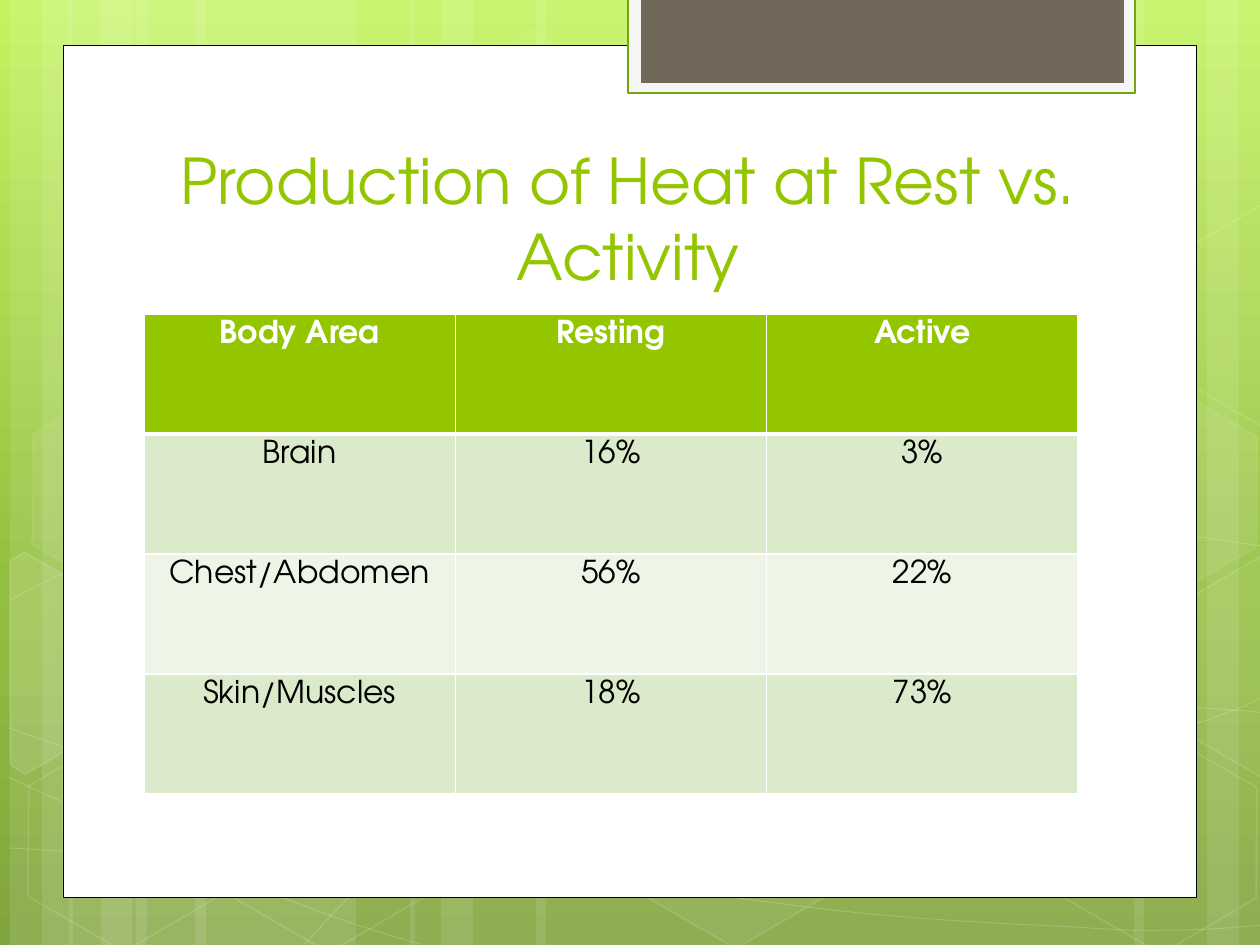
import math
from dataclasses import dataclass
from typing import Optional

from lxml import etree
from pptx import Presentation
from pptx.dml.color import RGBColor
from pptx.enum import shapes, text
from pptx.oxml import parse_xml
from pptx.oxml.ns import nsdecls, qn
from pptx.util import Pt

SCALE = 914400 / 126  # EMU per px
FONT = "TeX Gyre Adventor"
WHITE, GREEN = "FFFFFF", "94C600"
FULL = 100
TILT = 30  # degrees, for every hexagon


def px(length: float) -> int:
    return round(length * SCALE)


def color(hex_value: str) -> RGBColor:
    return RGBColor.from_string(hex_value)


@dataclass
class Style:
    fill: Optional[str] = None
    fill_alpha: int = FULL
    line: Optional[str] = None
    line_width: float = 1
    line_alpha: int = FULL


@dataclass
class Box:
    left: int
    top: int
    width: int
    height: int
    style: Style


@dataclass
class Hexagon:
    left: int
    top: int
    fill_alpha: int
    line_alpha: int


@dataclass
class CutHexagon:
    points: list
    center: tuple
    fill_alpha: int


def glass(fill_alpha: int, line_alpha: int) -> Style:
    fill = WHITE if fill_alpha else None
    return Style(fill, fill_alpha, WHITE, 1, line_alpha)


def set_alpha(paint, percent: int) -> None:
    if percent < FULL:
        node = next(paint.iter(qn("a:srgbClr")))
        etree.SubElement(node, qn("a:alpha")).set("val", str(percent * 1000))


def apply_style(shape, style: Style) -> None:
    shape.shadow.inherit = False
    if style.fill:
        shape.fill.solid()
        shape.fill.fore_color.rgb = color(style.fill)
        set_alpha(shape._element.spPr.find(qn("a:solidFill")), style.fill_alpha)
    else:
        shape.fill.background()
    if style.line:
        shape.line.color.rgb = color(style.line)
        shape.line.width = Pt(style.line_width)
        set_alpha(shape._element.spPr.find(qn("a:ln")), style.line_alpha)
    else:
        shape.line.fill.background()


def draw_box(slide, box: Box, kind=shapes.MSO_SHAPE.RECTANGLE):
    shape = slide.shapes.add_shape(
        kind, px(box.left), px(box.top), px(box.width), px(box.height))
    apply_style(shape, box.style)
    return shape


def draw_hexagon(slide, hexagon: Hexagon) -> None:
    style = glass(hexagon.fill_alpha, hexagon.line_alpha)
    box = Box(hexagon.left, hexagon.top, 220, 192, style)
    shape = draw_box(slide, box, shapes.MSO_SHAPE.HEXAGON)
    shape.adjustments[0] = 0.285
    shape.rotation = TILT


def draw_outline(slide, points: list, style: Style, closed: bool):
    builder = slide.shapes.build_freeform(*points[0], scale=SCALE)
    builder.add_line_segments(points[1:], close=closed)
    shape = builder.convert_to_shape()
    apply_style(shape, style)
    return shape


def draw_cut_hexagon(slide, cut: CutHexagon) -> None:
    """Turn the corners back about the center, then tilt the whole shape."""
    cos, sin = math.cos(math.radians(TILT)), math.sin(math.radians(TILT))
    center_x, center_y = cut.center
    offsets = [(x - center_x, y - center_y) for x, y in cut.points]
    upright = [(center_x + x * cos + y * sin, center_y - x * sin + y * cos)
               for x, y in offsets]
    draw_outline(slide, upright, glass(cut.fill_alpha, 12), True).rotation = TILT


def draw_curve(slide, knots: list, style: Style) -> None:
    """Knots are a start, then two handles and an end for each cubic curve."""
    shape = draw_outline(slide, knots, style, False)
    segments = list(shape._element.iter(qn("a:lnTo")))
    for first in range(0, len(segments), 3):
        curve = etree.Element(qn("a:cubicBezTo"))
        segments[first].addprevious(curve)
        for segment in segments[first:first + 3]:
            curve.append(segment[0])
            segment.getparent().remove(segment)


def set_background(slide, stops: list) -> None:
    slide.background.fill.solid()
    properties = slide._element.find(".//" + qn("p:bgPr"))
    marks = "".join(f'<a:gs pos="{position * 1000}"><a:srgbClr val="{value}"/></a:gs>'
                    for position, value in stops)
    gradient = parse_xml(f'<a:gradFill {nsdecls("a")}><a:gsLst>{marks}</a:gsLst>'
                         '<a:lin ang="5400000" scaled="0"/></a:gradFill>')
    properties.replace(properties.find(qn("a:solidFill")), gradient)


def write(frame, words: str, size: int, hex_value: str, bold: bool = False) -> None:
    paragraph = frame.paragraphs[0]
    paragraph.alignment = text.PP_ALIGN.CENTER
    run = paragraph.add_run()
    run.text = words
    run.font.name, run.font.size, run.font.bold = FONT, Pt(size), bold
    run.font.color.rgb = color(hex_value)


def set_borders(cell, widths: dict) -> None:
    properties = cell._tc.get_or_add_tcPr()
    for index, (side, width) in enumerate(widths.items()):
        properties.insert(index, parse_xml(
            f'<a:ln{side} {nsdecls("a")} w="{Pt(width)}"><a:solidFill>'
            f'<a:srgbClr val="{WHITE}"/></a:solidFill></a:ln{side}>'))


def draw_table(slide, rows: list) -> None:
    table = slide.shapes.add_table(
        len(rows), len(rows[0]), px(144), px(314), px(934), px(480)).table
    table.first_row = table.horz_banding = False
    for row, values in enumerate(rows):
        header = row == 0
        for column, value in enumerate(values):
            cell = table.cell(row, column)
            cell.fill.solid()
            cell.fill.fore_color.rgb = color(
                GREEN if header else ("EEF5E7", "DCEACC")[row % 2])
            set_borders(cell, {"L": 1, "R": 1, "T": 3 if row == 1 else 1,
                               "B": 3 if header else 1})
            write(cell.text_frame, value, 18, WHITE if header else "000000", header)


# Left and width of the full-height stripes
STRIPES = [(136, 220), (10, 63), (42, 105), (195, 220), (69, 63), (101, 105),
           (924, 220), (1207, 63), (1134, 105), (536, 388), (410, 63), (441, 105)]
CURVES = [
    [(9, 848), (77, 852), (145, 856), (239, 854), (334, 853), (451, 850), (577, 838),
     (703, 825), (882, 801), (998, 777), (1113, 753), (1231, 716), (1269, 694)],
    [(9, 601), (45, 581), (82, 562), (152, 543), (224, 524), (326, 498), (437, 488),
     (549, 479), (685, 478), (824, 488), (963, 498), (1193, 537), (1269, 547)],
    [(8, 777), (160, 847), (311, 916), (421, 944)],
    [(9, 728), (48, 742), (88, 756), (161, 776), (234, 795), (344, 827), (450, 848),
     (554, 869), (687, 892), (791, 905), (896, 919), (1008, 924), (1075, 927),
     (1140, 932), (1158, 930), (1191, 930), (1223, 929), (1246, 926), (1269, 925)],
    [(305, 944), (328, 919), (350, 893), (381, 871), (411, 848), (454, 823), (489, 805),
     (524, 788), (546, 780), (592, 767), (638, 754), (722, 737), (766, 728),
     (811, 719), (818, 719), (857, 717), (896, 713), (958, 709), (1000, 708),
     (1045, 707), (1116, 708), (1116, 708), (1144, 708), (1173, 708), (1201, 708),
     (1223, 709), (1245, 711), (1256, 712), (1264, 713), (1268, 712), (1268, 713)],
]
HEXAGONS = [
    Hexagon(421, 45, 4, 8), Hexagon(626, 742, 6, 12), Hexagon(14, 745, 0, 12),
    Hexagon(18, 393, 7, 8), Hexagon(219, 746, 0, 12), Hexagon(949, 571, 10, 12),
    Hexagon(1051, 747, 0, 12), Hexagon(1051, 396, 7, 8),
]
LEFT_CUT = [(10, 561), (24, 552), (121, 607), (120, 718), (25, 774), (10, 765)]
RIGHT_CUT = [(1167, 611), (1261, 556), (1271, 562), (1271, 772), (1263, 777), (1167, 722)]
CUT_HEXAGONS = [
    CutHexagon(LEFT_CUT, (45, 674), 10),
    CutHexagon(RIGHT_CUT, (1241, 655), 4),
    CutHexagon([(x, y - 351) for x, y in RIGHT_CUT], (1241, 304), 0),
]
PANELS = [
    Box(63, 45, 1134, 853, Style(WHITE, line="000000", line_width=0.5)),
    Box(628, -3, 507, 96, Style("F5F5F5", line="74A510", line_width=1.25)),
    Box(641, -3, 483, 86, Style("71685A")),
]
ROWS = [
    ("Body Area", "Resting", "Active"),
    ("Brain", "16%", "3%"),
    ("Chest/Abdomen", "56%", "22%"),
    ("Skin/Muscles", "18%", "73%"),
]


def main() -> None:
    presentation = Presentation()
    presentation.slide_width, presentation.slide_height = px(1260), px(945)
    slide = presentation.slides.add_slide(presentation.slide_layouts[6])
    # Backdrop
    set_background(slide, [(0, "C3F35F"), (62, "93BF3F"), (100, "81A53E")])
    for left, width in STRIPES:
        draw_box(slide, Box(left, 0, width, 945, Style(WHITE, 10)))
    for knots in CURVES:
        draw_curve(slide, knots, Style(line=WHITE, line_width=0.5, line_alpha=20))
    for hexagon in HEXAGONS:
        draw_hexagon(slide, hexagon)
    for cut in CUT_HEXAGONS:
        draw_cut_hexagon(slide, cut)
    # Card and tab
    for panel in PANELS:
        draw_box(slide, panel)
    # Title
    frame = slide.shapes.add_textbox(px(144), px(141), px(968), px(158)).text_frame
    frame.word_wrap = True
    frame.vertical_anchor = text.MSO_ANCHOR.BOTTOM
    write(frame, "Production of Heat at Rest vs. Activity", 36, GREEN)
    # Heat table
    draw_table(slide, ROWS)
    presentation.save("out.pptx")


if __name__ == "__main__":
    main()
